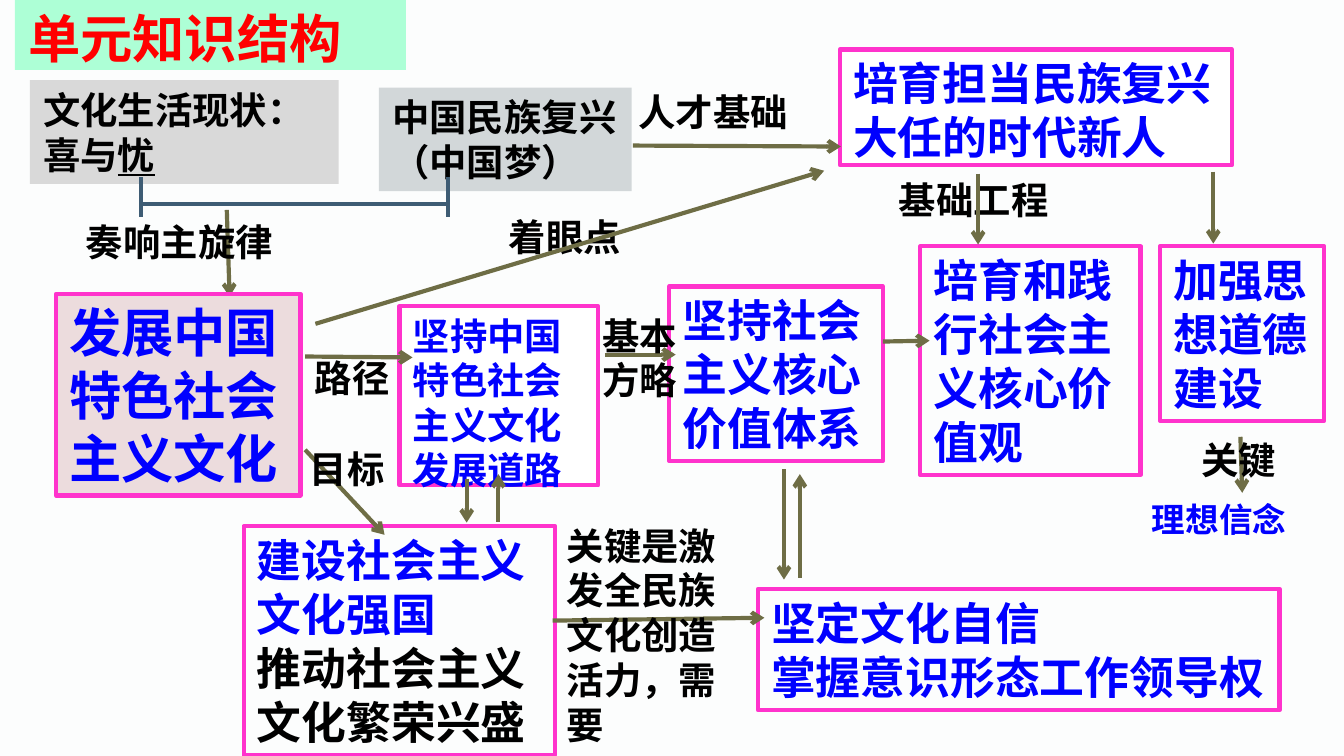
from dataclasses import dataclass

from lxml import etree
from pptx import Presentation
from pptx.dml.color import RGBColor
from pptx.enum.shapes import MSO_CONNECTOR, MSO_SHAPE
from pptx.enum.text import MSO_ANCHOR, MSO_AUTO_SIZE, PP_ALIGN
from pptx.oxml.ns import qn
from pptx.util import Pt

LINE = MSO_CONNECTOR.STRAIGHT
RECT = MSO_SHAPE.RECTANGLE
TOP = MSO_ANCHOR.TOP
LEFT = PP_ALIGN.LEFT
FIXED = MSO_AUTO_SIZE.NONE


@dataclass(frozen=True)
class Theme:
    """Colours, type sizes and fonts of the slide."""
    page: str = "FCFDFD"
    mint: str = "ADFFD6"
    grey: str = "D9D9D9"
    steel: str = "D2D7D9"
    rose: str = "ECDCDD"
    white: str = "FFFFFF"
    pink: str = "FF33CC"
    olive: str = "6E6D45"
    navy: str = "3E5C74"
    red: str = "FF0000"
    blue: str = "0000FF"
    black: str = "000000"
    huge: int = 28
    large: int = 24
    mid: int = 20
    small: int = 18
    stroke: float = 2.25
    sans: str = "Arial"
    serif: str = "Times New Roman"
    han: str = "Noto Sans CJK SC"


T = Theme()


def rgb(code):
    """Turn a hex code into a colour."""
    return RGBColor.from_string(code)


def place(shape, box, spot):
    """Set a shape at a spot relative to the region box."""
    x, y, width, height = spot
    shape.left, shape.top = Pt(box[0] + x), Pt(box[1] + y)
    shape.width, shape.height = Pt(width), Pt(height)


def write(shape, paras, size):
    """Fill a shape with paragraphs of (text, font, colour, underline) runs."""
    frame = shape.text_frame
    frame.word_wrap = True
    frame.auto_size = FIXED
    frame.vertical_anchor = TOP
    frame.margin_left = frame.margin_right = Pt(7.2)
    frame.margin_top = frame.margin_bottom = Pt(3.6)
    for i, runs in enumerate(paras):
        para = frame.add_paragraph() if i else frame.paragraphs[0]
        para.alignment = LEFT
        for text, face, color, *under in runs:
            run = para.add_run()
            run.text = text
            font = run.font
            font.name, font.size, font.bold = face, Pt(size), True
            font.color.rgb = rgb(color)
            if under:
                font.underline = True
            etree.SubElement(font._element, qn("a:ea"), typeface=T.han)


def node(slide, box, spot, paras, size=T.large, fill=None, edge=T.pink):
    """Add a box with text."""
    shape = slide.shapes.add_shape(RECT, 0, 0, 0, 0)
    place(shape, box, spot)
    shape.shadow.inherit = False
    if fill:
        shape.fill.solid()
        shape.fill.fore_color.rgb = rgb(fill)
    else:
        shape.fill.background()
    if edge:
        shape.line.color.rgb = rgb(edge)
        shape.line.width = Pt(T.stroke)
    else:
        shape.line.fill.background()
    write(shape, paras, size)


def label(slide, box, spot, text, face=T.han, color=T.black, size=T.mid):
    """Add a free caption."""
    shape = slide.shapes.add_textbox(0, 0, 0, 0)
    place(shape, box, spot)
    write(shape, [[(text, face, color)]], size)


def link(slide, box, ends, color=T.olive, arrow=True):
    """Draw a line between two points of the region."""
    dx, dy = box[:2]
    x1, y1, x2, y2 = ends
    line = slide.shapes.add_connector(
        LINE, Pt(dx + x1), Pt(dy + y1), Pt(dx + x2), Pt(dy + y2))
    line.line.color.rgb = rgb(color)
    line.line.width = Pt(T.stroke)
    if arrow:
        etree.SubElement(line.line._get_or_add_ln(), qn("a:tailEnd"), type="arrow")
    etree.SubElement(line._element.spPr, qn("a:effectLst"))


def add_title(slide, box):
    """Place the slide title."""
    title = slide.shapes.title
    place(title, box, (0, 0, *box[2:]))
    title.fill.solid()
    title.fill.fore_color.rgb = rgb(T.mint)
    write(title, [[("单元知识结构", T.sans, T.red)]], T.huge)


def add_status(slide, box):
    """Draw the present state, the dream and their bracket."""
    node(slide, box, (0, 0, 165.5, 55.5),
         [[("文化生活现状：", T.han, T.black)],
          [("喜与", T.sans, T.black), ("忧", T.sans, T.black, True)]],
         T.mid, T.grey, None)
    node(slide, box, (187, 4, 135.5, 55.5),
         [[("中国民族复兴", T.serif, T.black)], [("（中国梦）", T.serif, T.black)]],
         T.mid, T.steel, None)
    for ends in ((59.5, 66.5, 224, 66.5), (59.5, 52, 59.5, 73.5),
                 (224, 52, 224, 73.5)):
        link(slide, box, ends, T.navy, False)
    link(slide, box, (105.5, 69.5, 107, 116))
    label(slide, box, (23, 71, 138, 31), "奏响主旋律")


def add_talent(slide, box):
    """Draw the branch on training a new generation."""
    node(slide, box, (116, 0, 210, 62),
         [[("培育担当民族复兴大任的时代新人", T.sans, T.blue)]], fill=T.white)
    node(slide, box, (159, 105.5, 118, 122.5),
         [[("培育和践行社会主义核心价值观", T.serif, T.blue)]])
    node(slide, box, (287.5, 105.5, 88, 93.5),
         [[("加强思想道德建设", T.han, T.blue)]])
    label(slide, box, (140.5, 65, 107, 31), "基础工程")
    label(slide, box, (276, 237, 87, 29), "理想信念", T.serif, T.blue, T.small)
    for ends in ((190, 66.5, 190, 104.5), (316, 65.5, 316, 104),
                 (330.5, 207.5, 331.5, 237.5), (5, 51.5, 116.5, 52)):
        link(slide, box, ends)
    label(slide, box, (302.5, 204, 65.5, 31), "关键")
    label(slide, box, (1, 18, 101, 31), "人才基础")


def add_culture(slide, box):
    """Draw the branch on developing culture."""
    node(slide, box, (184, 6.5, 106.5, 96),
         [[("坚持中国特色社会主义文化发展道路", T.sans, T.blue)]], T.mid, T.white)
    node(slide, box, (100.5, 124.5, 167, 122.5),
         [[("建设社会主义文化强国", T.han, T.blue)],
          [("推动社会主义文化繁荣兴盛", T.serif, T.black)]])
    node(slide, box, (0, 0, 131, 108),
         [[("发展中国特色社会主义文化", T.sans, T.blue)]], T.huge, T.rose)
    for ends in ((133.5, 83.5, 176, 129), (133.5, 33.5, 191, 34),
                 (237, 122, 237, 96.5), (220, 99, 220, 122.5)):
        link(slide, box, ends)
    label(slide, box, (129, 78, 67, 31), "目标")
    label(slide, box, (131.5, 29, 73.5, 31), "路径")
    label(slide, box, (235.5, -46.5, 103, 31), "着眼点")
    link(slide, box, (139, 16, 411.5, -66))


def add_system(slide, box):
    """Draw the branch on core values and confidence."""
    node(slide, box, (62.5, 0, 114.5, 93.5),
         [[("坚持社会主义核心价值体系", T.serif, T.blue)]])
    node(slide, box, (110, 162, 279.5, 65),
         [[("坚定文化自信", T.sans, T.blue)],
          [("掌握意识形态工作领导权", T.sans, T.blue)]])
    for ends in ((28, 36.5, 66, 36.5), (177, 29.5, 202, 29),
                 (0, 179, 113.5, 177.5), (124, 98, 124, 157),
                 (132.5, 156, 132.5, 100.5)):
        link(slide, box, ends)
    label(slide, box, (0.5, 123, 108.5, 127.5), "关键是激发全民族文化创造活力，需要")
    label(slide, box, (19.5, 10.5, 58.5, 55.5), "基本方略")


def main():
    """Build and save the slide."""
    deck = Presentation()
    deck.slide_width, deck.slide_height = Pt(720), Pt(405)
    slide = deck.slides.add_slide(deck.slide_layouts[5])
    slide.background.fill.solid()
    slide.background.fill.fore_color.rgb = rgb(T.page)
    add_title(slide, (8, 0, 209.5, 37.5))
    add_status(slide, (16, 43, 322.5, 116))
    add_talent(slide, (334, 26.5, 375.5, 266))
    add_culture(slide, (30, 157.5, 411.5, 247))
    add_system(slide, (296, 153.5, 389.5, 250.5))
    deck.save("out.pptx")


if __name__ == "__main__":
    main()
